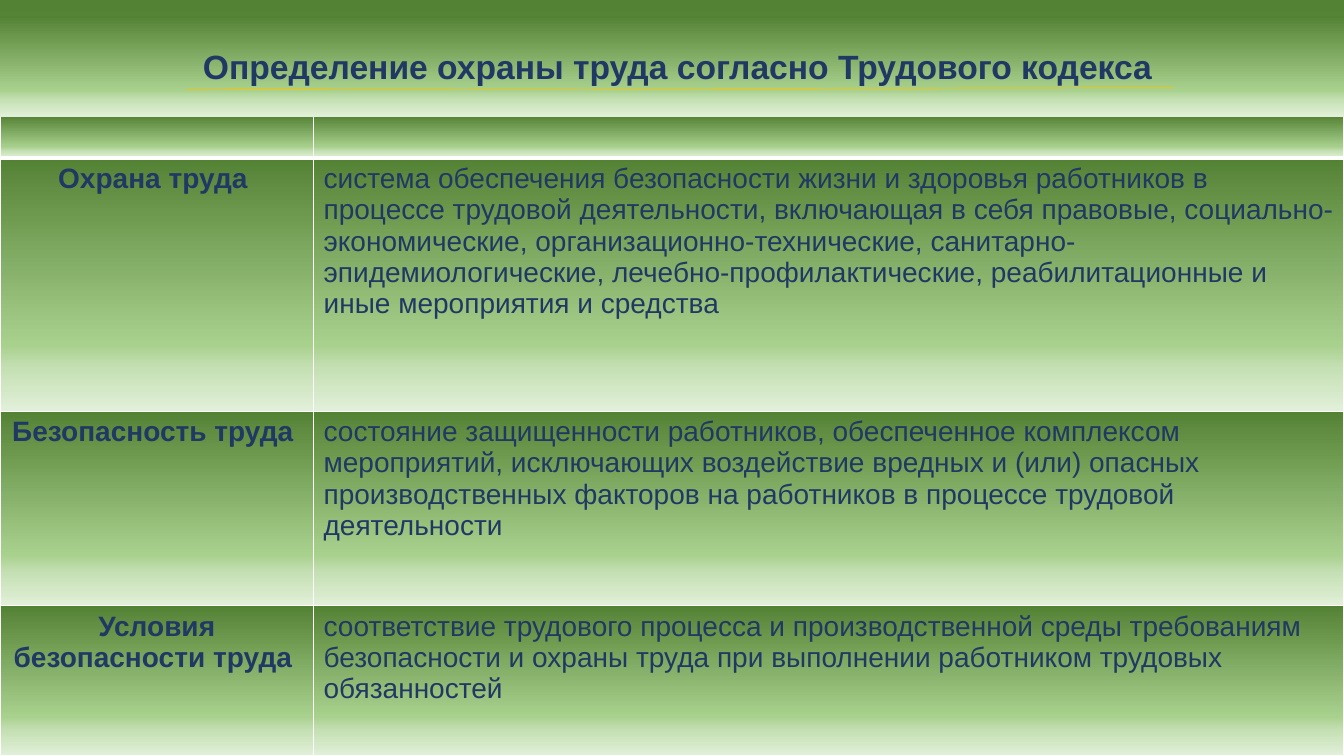
from pptx import Presentation
from pptx.dml.color import RGBColor
from pptx.enum.shapes import MSO_CONNECTOR as Connector, MSO_SHAPE as Preset
from pptx.enum.text import MSO_ANCHOR as Anchor, PP_ALIGN as Align
from pptx.oxml.ns import qn
from pptx.util import Inches, Pt
from lxml.etree import SubElement, Element

WIDTH, HEIGHT = 13.33, 7.5
COLORS = {
    "dark": "548235",
    "middle": "A9D18E",
    "light": "C5E0B4",
    "pale": "E2F0D9",
    "text": "203864",
    "gold": "FFC000",
    "border": "FFFFFF",
}
GRADIENT = [(0, "dark"), (74, "middle"), (83, "light"), (100, "pale")]
FONT = "Arial"
TITLE = "Определение охраны труда согласно Трудового кодекса"
COLUMNS = [3.11, 10.22]
ROWS = [0.42, 2.51, 1.93, 1.49]
DEFINITIONS = [
    ("Охрана труда ",
     "система обеспечения безопасности жизни и здоровья работников в процессе "
     "трудовой деятельности, включающая в себя правовые, социально-экономические, "
     "организационно-технические, санитарно-эпидемиологические, "
     "лечебно-профилактические, реабилитационные и иные мероприятия и средства"),
    ("Безопасность труда ",
     "состояние защищенности работников, обеспеченное комплексом мероприятий, "
     "исключающих воздействие вредных и (или) опасных производственных факторов "
     "на работников в процессе трудовой деятельности"),
    ("Условия безопасности труда ",
     "соответствие трудового процесса и производственной среды требованиям "
     "безопасности и охраны труда при выполнении работником трудовых обязанностей"),
]


def add_color(parent, name):
    SubElement(parent, qn("a:srgbClr"), val=COLORS[name])


def paint_gradient(fill, element):
    fill.gradient()
    fill.gradient_angle = 270
    stops = next(element.iter(qn("a:gsLst")))
    for stop in list(stops):
        stops.remove(stop)
    for position, name in GRADIENT:
        add_color(SubElement(stops, qn("a:gs"), pos=str(position * 1000)), name)


def write_text(frame, text, size, bold, align):
    frame.word_wrap = True
    frame.text = text
    paragraph = frame.paragraphs[0]
    paragraph.alignment = align
    for run in paragraph.runs:
        run.font.name = FONT
        run.font.size = Pt(size)
        run.font.bold = bold
        run.font.color.rgb = RGBColor.from_string(COLORS["text"])


def add_borders(cell, bottom):
    properties = cell._tc.get_or_add_tcPr()
    widths = {"lnL": 1, "lnR": 1, "lnT": 1, "lnB": bottom}
    for index, (side, width) in enumerate(widths.items()):
        line = Element(qn(f"a:{side}"), w=str(Pt(width)))
        add_color(SubElement(line, qn("a:solidFill")), "border")
        properties.insert(index, line)


def add_definitions(slide):
    frame = slide.shapes.add_table(
        len(ROWS), len(COLUMNS), 0, Inches(1.15), Inches(WIDTH), Inches(sum(ROWS)))
    table = frame.table
    for column, width in zip(table.columns, COLUMNS):
        column.width = Inches(width)
    for row, height in zip(table.rows, ROWS):
        row.height = Inches(height)
    for row_index, row in enumerate(table.rows):
        for cell in row.cells:
            paint_gradient(cell.fill, cell._tc)
            add_borders(cell, 3 if row_index == 0 else 1)
    for row_index, (term, meaning) in enumerate(DEFINITIONS, start=1):
        write_text(table.cell(row_index, 0).text_frame, term, 20, True, Align.CENTER)
        write_text(table.cell(row_index, 1).text_frame, meaning, 20, False, Align.LEFT)


def add_title(slide):
    shape = slide.shapes.add_shape(
        Preset.RECTANGLE, 0, Inches(0.16), Inches(13.44), Inches(1))
    shape.shadow.inherit = False
    paint_gradient(shape.fill, shape._element)
    shape.line.fill.background()
    shape.text_frame.vertical_anchor = Anchor.MIDDLE
    write_text(shape.text_frame, TITLE, 24, True, Align.CENTER)


def add_underline(slide):
    line = slide.shapes.add_connector(
        Connector.STRAIGHT, Inches(1.85), Inches(0.89), Inches(11.64), Inches(0.87))
    line.line.color.rgb = RGBColor.from_string(COLORS["gold"])
    line.line.width = Pt(0.5)
    SubElement(line._element.spPr, qn("a:effectLst"))


def main():
    presentation = Presentation()
    presentation.slide_width = Inches(WIDTH)
    presentation.slide_height = Inches(HEIGHT)
    slide = presentation.slides.add_slide(presentation.slide_layouts[6])
    paint_gradient(slide.background.fill, slide.element)
    add_definitions(slide)
    add_title(slide)
    add_underline(slide)
    presentation.save("out.pptx")


if __name__ == "__main__":
    main()
